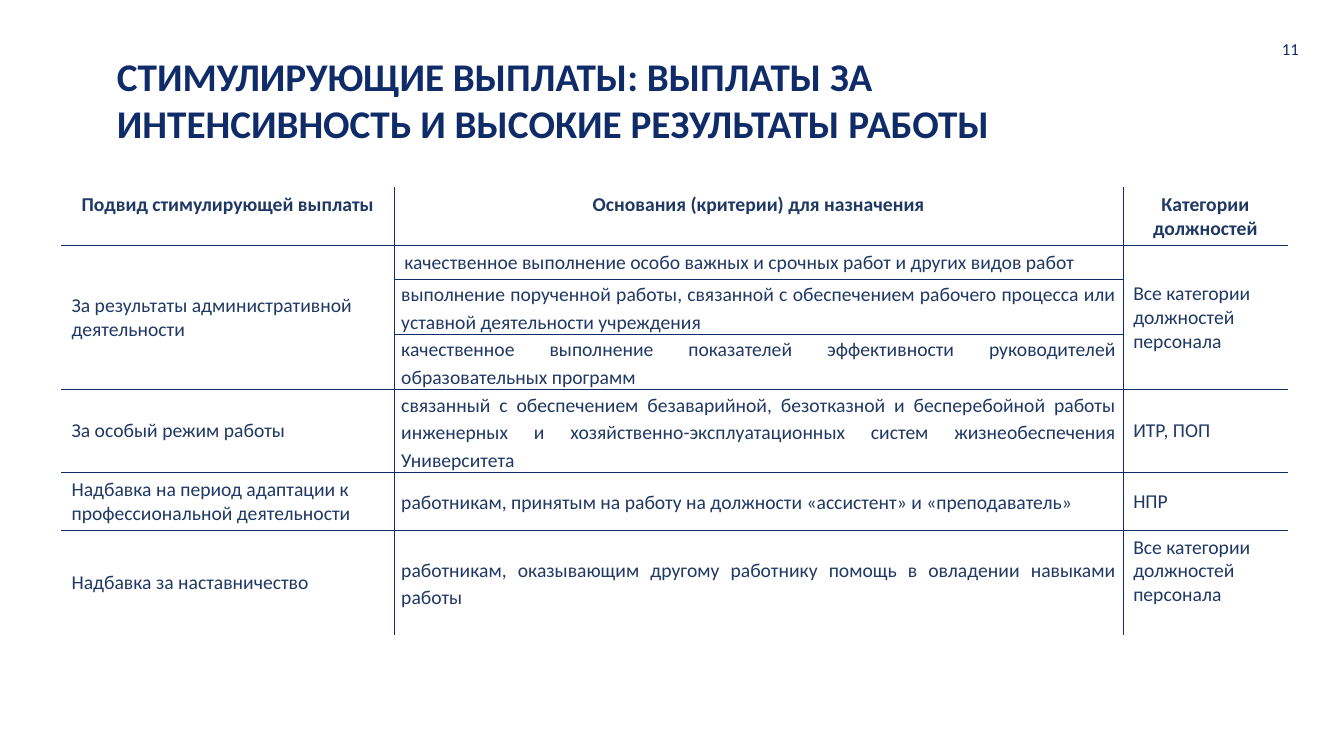
from pptx import Presentation
from pptx.dml.color import RGBColor
from pptx.enum.text import MSO_ANCHOR, PP_ALIGN
from pptx.oxml import parse_xml
from pptx.oxml.ns import nsdecls
from pptx.util import Inches, Pt

TOP, MIDDLE = MSO_ANCHOR.TOP, MSO_ANCHOR.MIDDLE
LEFT, CENTER, RIGHT, JUSTIFY = (PP_ALIGN.LEFT, PP_ALIGN.CENTER,
                                PP_ALIGN.RIGHT, PP_ALIGN.JUSTIFY)
NAVY, TEXT = "0F2C68", "203864"
FONT = "Calibri"

COLUMN_WIDTHS = [3.3, 7.23, 1.63]
ROW_HEIGHTS = [0.57, 0.34, 0.54, 0.55, 0.82, 0.57, 1.04]
ALL_STAFF = "Все категории должностей персонала"
ROWS = [
    ("Подвид стимулирующей выплаты", "Основания (критерии) для назначения",
     "Категории должностей"),
    ("За результаты административной деятельности",
     "качественное выполнение особо важных и срочных работ и других видов работ",
     ALL_STAFF),
    (None, "выполнение порученной работы, связанной с обеспечением рабочего "
     "процесса или уставной деятельности учреждения", None),
    (None, "качественное выполнение показателей эффективности руководителей "
     "образовательных программ", None),
    ("За особый режим работы",
     "связанный с обеспечением безаварийной, безотказной и бесперебойной работы "
     "инженерных и хозяйственно-эксплуатационных систем жизнеобеспечения "
     "Университета", "ИТР, ПОП"),
    ("Надбавка на период адаптации к профессиональной деятельности",
     "работникам, принятым на работу на должности «ассистент» и «преподаватель»",
     "НПР"),
    ("Надбавка за наставничество",
     "работникам, оказывающим другому работнику помощь в овладении навыками работы",
     ALL_STAFF),
]
MERGED_ROWS = (1, 3)


def rgb(color):
    return RGBColor.from_string(color)


def set_text(tf, text, size, color, bold=False, align=LEFT):
    p = tf.paragraphs[0]
    p.text = text
    p.alignment = align
    p.font.name = FONT
    p.font.size = Pt(size)
    p.font.bold = bold
    p.font.color.rgb = rgb(color)
    return p


def add_text(slide, box, text, size, inset, **style):
    tb = slide.shapes.add_textbox(*map(Inches, box))
    tf = tb.text_frame
    tf.word_wrap = True
    tf.margin_left = tf.margin_right = Inches(inset)
    tf.margin_top = tf.margin_bottom = Inches(min(inset, 0.05))
    set_text(tf, text, size, NAVY, **style)
    return tf


def set_borders(cell, sides):
    """Rule the named sides of a cell and clear the others."""
    tc_pr = cell._tc.get_or_add_tcPr()
    for i, side in enumerate("LRTB"):
        paint = (f'<a:solidFill><a:srgbClr val="{NAVY}"/></a:solidFill>'
                 if side in sides else "<a:noFill/>")
        tc_pr.insert(i, parse_xml(
            f'<a:ln{side} {nsdecls("a")} w="{Pt(1)}">{paint}</a:ln{side}>'))


def inner_sides(table, row, col):
    """Sides shared with a neighbour outside the cell's own merge."""
    last_row, last_col = len(ROW_HEIGHTS) - 1, len(COLUMN_WIDTHS) - 1
    cell = table.cell(row, col)
    sides = "L" if col > 0 else ""
    if col < last_col:
        sides += "R"
    if row > 0 and not cell.is_spanned:
        sides += "T"
    if row < last_row and (cell.is_merge_origin
                           or not table.cell(row + 1, col).is_spanned):
        sides += "B"
    return sides


def fill_cell(cell, row, col, text):
    header, criterion = row == 0, row > 0 and col == 1
    align = CENTER if header else JUSTIFY if criterion else LEFT
    p = set_text(cell.text_frame, text, 14, TEXT, header, align)
    at_top = header or (row == len(ROWS) - 1 and col == 2)
    cell.vertical_anchor = TOP if at_top else MIDDLE
    if criterion and row > 1:
        p.line_spacing = 1.15
        cell.margin_left = cell.margin_right = Inches(0.07)
        cell.margin_top = cell.margin_bottom = 0


def add_payments_table(slide, left, top):
    table = slide.shapes.add_table(
        len(ROWS), len(COLUMN_WIDTHS), Inches(left), Inches(top),
        Inches(sum(COLUMN_WIDTHS)), Inches(sum(ROW_HEIGHTS))).table
    table.first_row = table.horz_banding = False
    for column, width in zip(table.columns, COLUMN_WIDTHS):
        column.width = Inches(width)
    for table_row, height in zip(table.rows, ROW_HEIGHTS):
        table_row.height = Inches(height)
    first, last = MERGED_ROWS
    for col in (0, 2):
        table.cell(first, col).merge(table.cell(last, col))
    for row, texts in enumerate(ROWS):
        for col, text in enumerate(texts):
            cell = table.cell(row, col)
            cell.fill.background()
            set_borders(cell, inner_sides(table, row, col))
            if text:
                fill_cell(cell, row, col, text)


def add_heading(slide):
    number = add_text(slide, (12.26, 0.23, 0.72, 0.5), "11", 12, 0.1, align=RIGHT)
    number.vertical_anchor = MIDDLE
    add_text(slide, (1.13, 0.49, 8.89, 0.46),
             "СТИМУЛИРУЮЩИЕ ВЫПЛАТЫ: ВЫПЛАТЫ ЗА ИНТЕНСИВНОСТЬ И ВЫСОКИЕ "
             "РЕЗУЛЬТАТЫ РАБОТЫ", 28, 0.03, bold=True)


def main():
    prs = Presentation()
    prs.slide_width, prs.slide_height = Inches(13.33), Inches(7.5)
    slide = prs.slides.add_slide(prs.slide_layouts[6])
    add_payments_table(slide, 0.61, 1.86)
    add_heading(slide)
    prs.save("out.pptx")


if __name__ == "__main__":
    main()
